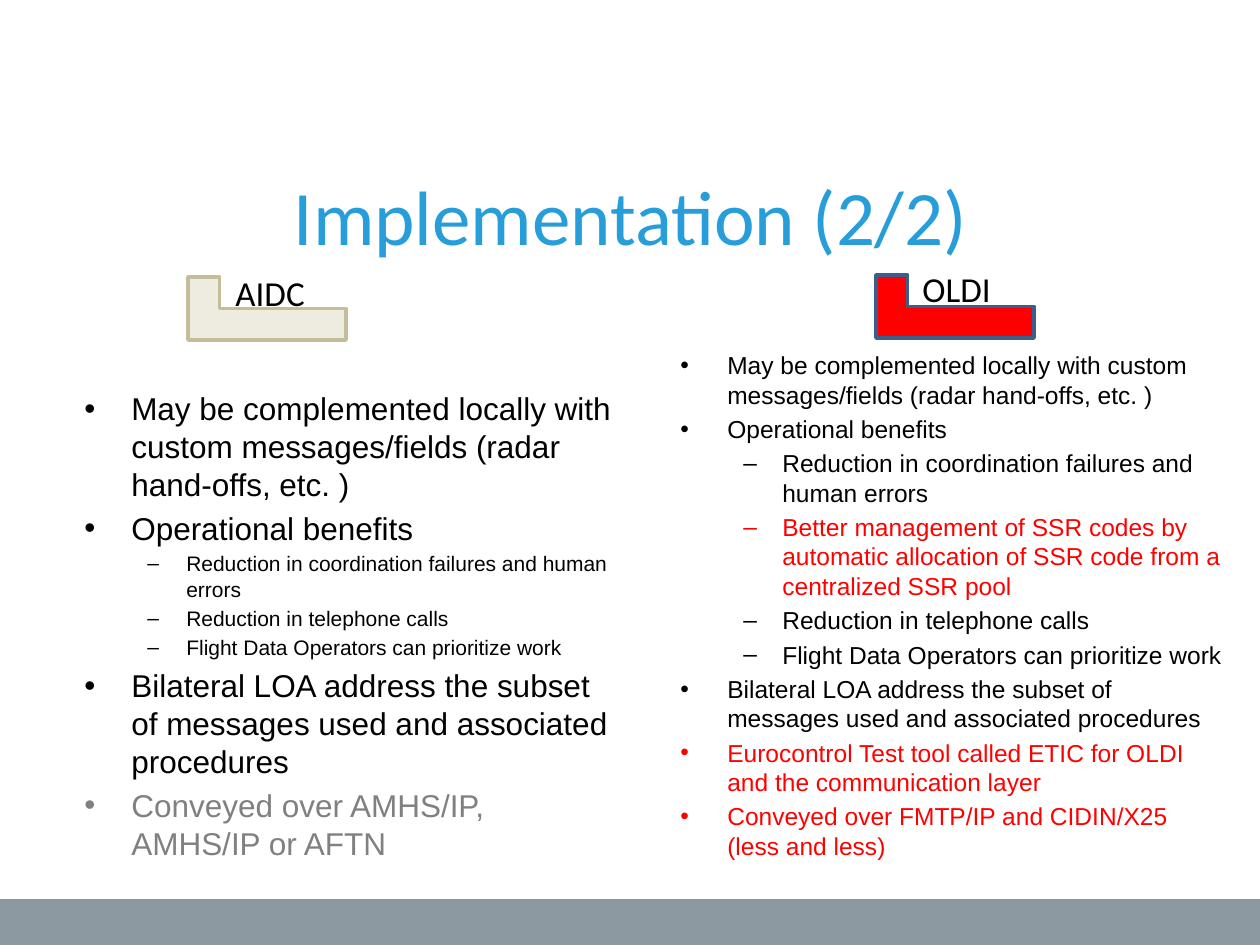
from dataclasses import dataclass
from typing import Optional

from lxml import etree
from pptx import Presentation
from pptx import util as u
from pptx.dml.color import RGBColor
from pptx.enum import shapes, text
from pptx.oxml import ns

PX = 914400 / 126  # EMU in one px
COLORS = {
    "footer": "8C99A1", "title": "279DD9", "black": "000000",
    "gray": "808080", "red": "FF0000",
    "cream": "EEECE1", "tan": "C4BD97", "navy": "3A5F8C",
}
BULLETS = ("•", "–")
TEXT_LEFT = (47, 102)
HANGING = (47, 39)


@dataclass
class Box:
    left: int
    top: int
    width: int
    height: int

    def emu(self) -> list[int]:
        return [px(n) for n in (self.left, self.top, self.width, self.height)]


@dataclass
class Item:
    words: str
    level: int = 0
    color: str = "black"


@dataclass
class Column:
    label: str
    label_box: Box
    corner: Box
    fill: str
    line: str
    body: Box
    sizes: tuple[int, int]  # points for each level
    items: list[Item]


def px(n: int) -> int:
    return round(n * PX)


def rgb(name: str) -> RGBColor:
    return RGBColor.from_string(COLORS[name])


def add_frame(page, box: Box, wrap: bool = True):
    frame = page.shapes.add_textbox(*box.emu()).text_frame
    frame.word_wrap = wrap
    return frame


def write(para, words: str, *, size: int, face: str = "Arial",
          color: str = "black", align: Optional[text.PP_ALIGN] = None) -> None:
    span = para.add_run()
    span.text = words
    para.font.size = span.font.size = u.Pt(size)
    para.font.color.rgb = span.font.color.rgb = rgb(color)
    para.font.name = span.font.name = face
    if align is not None:
        para.alignment = align


def set_bullet(para, level: int) -> None:
    para.level = level
    props = para._p.get_or_add_pPr()
    props.set("marL", str(px(TEXT_LEFT[level])))
    props.set("indent", str(-px(HANGING[level])))
    etree.SubElement(props, ns.qn("a:buFont")).set("typeface", "Arial")
    etree.SubElement(props, ns.qn("a:buChar")).set("char", BULLETS[level])


def add_preset(page, kind: shapes.MSO_SHAPE, box: Box, fill: str,
               line: Optional[str] = None) -> None:
    shape = page.shapes.add_shape(kind, *box.emu())
    shape.shadow.inherit = False
    shape.fill.solid()
    shape.fill.fore_color.rgb = rgb(fill)
    if line:
        shape.line.color.rgb = rgb(line)
        shape.line.width = u.Pt(2)
    else:
        shape.line.fill.background()


def add_list(page, box: Box, items: list[Item], sizes: tuple[int, int]) -> None:
    frame = add_frame(page, box)
    for index, item in enumerate(items):
        para = frame.add_paragraph() if index else frame.paragraphs[0]
        size = sizes[item.level]
        if index:
            para.space_before = u.Pt(round(size * 0.2, 1))
        set_bullet(para, item.level)
        write(para, item.words, size=size, color=item.color)


def add_column(page, column: Column) -> None:
    add_list(page, column.body, column.items, column.sizes)
    add_preset(page, shapes.MSO_SHAPE.CORNER, column.corner, column.fill, column.line)
    frame = add_frame(page, column.label_box, wrap=False)
    frame.auto_size = text.MSO_AUTO_SIZE.SHAPE_TO_FIT_TEXT
    write(frame.paragraphs[0], column.label, size=20, face="Calibri")


# Points shared by both systems
CUSTOM = Item("May be complemented locally with custom messages/fields (radar hand-offs, etc. )")
BENEFITS = Item("Operational benefits")
FAILURES = Item("Reduction in coordination failures and human errors", 1)
CALLS = Item("Reduction in telephone calls", 1)
PRIORITY = Item("Flight Data Operators can prioritize work", 1)
BILATERAL = Item("Bilateral LOA address the subset of messages used and associated procedures")

COLUMNS = [
    Column("AIDC", Box(223, 265, 96, 55), Box(188, 277, 158, 63), "cream", "tan",
           Box(72, 383, 553, 410), (18, 12),
           [CUSTOM, BENEFITS, FAILURES, CALLS, PRIORITY, BILATERAL,
            Item("Conveyed over AMHS/IP, AMHS/IP or AFTN", color="gray")]),
    Column("OLDI", Box(910, 261, 95, 55), Box(876, 275, 158, 63), "red", "navy",
           Box(668, 344, 567, 546), (14, 14),
           [CUSTOM, BENEFITS, FAILURES,
            Item("Better management of SSR codes by automatic allocation of SSR code "
                 "from a centralized SSR pool", 1, "red"),
            CALLS, PRIORITY, BILATERAL,
            Item("Eurocontrol Test tool called ETIC for OLDI and the communication layer",
                 color="red"),
            Item("Conveyed over FMTP/IP and CIDIN/X25 (less and less)", color="red")]),
]


def main() -> None:
    deck = Presentation()
    deck.slide_width, deck.slide_height = px(1260), px(945)
    page = deck.slides.add_slide(deck.slide_layouts[6])

    # Footer band
    add_preset(page, shapes.MSO_SHAPE.RECTANGLE, Box(0, 899, 1260, 46), "footer")

    # Title
    title = add_frame(page, Box(64, 159, 1134, 158))
    title.margin_top = px(10)
    write(title.paragraphs[0], "Implementation (2/2)", size=44, face="Calibri",
          color="title", align=text.PP_ALIGN.CENTER)

    # Two compared systems
    for column in COLUMNS:
        add_column(page, column)

    deck.save("out.pptx")


if __name__ == "__main__":
    main()
